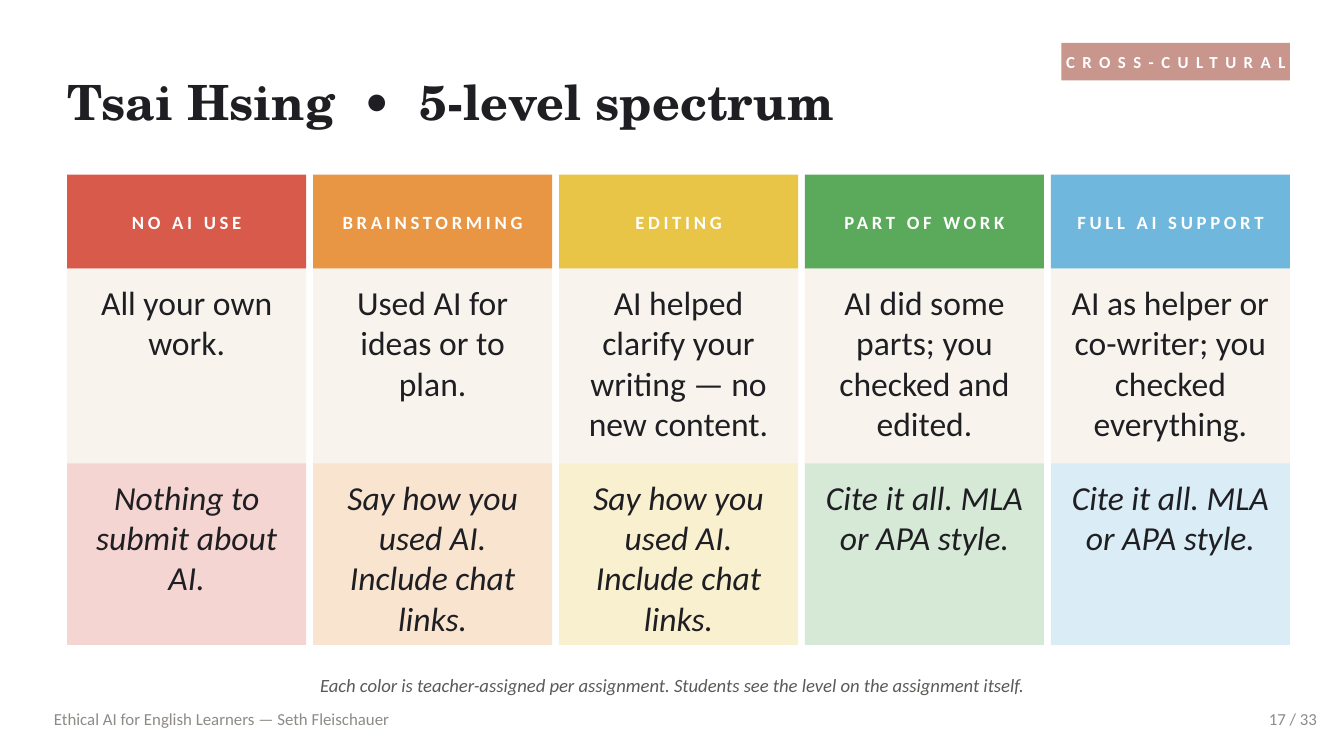
from lxml import etree
from pptx import Presentation
from pptx.dml.color import RGBColor
from pptx.enum.shapes import MSO_SHAPE
from pptx.enum.text import MSO_ANCHOR, PP_ALIGN
from pptx.oxml.ns import qn
from pptx.util import Cm, Pt

RECTANGLE = MSO_SHAPE.RECTANGLE
TOP, MIDDLE = MSO_ANCHOR.TOP, MSO_ANCHOR.MIDDLE
LEFT, CENTER, RIGHT = PP_ALIGN.LEFT, PP_ALIGN.CENTER, PP_ALIGN.RIGHT

INK = RGBColor(0x1F, 0x1F, 0x23)
WHITE = RGBColor(0xFF, 0xFF, 0xFF)
CREAM = RGBColor(0xF8, 0xF4, 0xED)
ROSE = RGBColor(0xC9, 0x96, 0x8D)
NOTE_GRAY = RGBColor(0x5C, 0x5A, 0x57)
FOOTER_GRAY = RGBColor(0x8E, 0x8B, 0x86)
RED = RGBColor(0xD8, 0x5A, 0x4A)
ORANGE = RGBColor(0xE8, 0x95, 0x44)
YELLOW = RGBColor(0xE8, 0xC5, 0x47)
GREEN = RGBColor(0x5B, 0xAA, 0x5C)
BLUE = RGBColor(0x6F, 0xB7, 0xDC)

HEADING_FONT = "TeX Gyre Schola"
BODY_FONT = "Calibri"

LEVELS = [
    ("NO AI USE", RED, "All your own work.", "Nothing to submit about AI."),
    ("BRAINSTORMING", ORANGE, "Used AI for ideas or to plan.",
     "Say how you used AI. Include chat links."),
    ("EDITING", YELLOW, "AI helped clarify your writing — no new content.",
     "Say how you used AI. Include chat links."),
    ("PART OF WORK", GREEN, "AI did some parts; you checked and edited.",
     "Cite it all. MLA or APA style."),
    ("FULL AI SUPPORT", BLUE, "AI as helper or co-writer; you checked everything.",
     "Cite it all. MLA or APA style."),
]


def add_text(slide, box, text, *, size, color, font=BODY_FONT, bold=False,
             italic=False, align=LEFT, anchor=MIDDLE, spacing=0):
    """Place one formatted line of text in a box given in centimetres."""
    frame = slide.shapes.add_textbox(*map(Cm, box)).text_frame
    frame.word_wrap = True
    frame.vertical_anchor = anchor
    frame.margin_left = frame.margin_right = 0
    frame.margin_top = frame.margin_bottom = 0
    paragraph = frame.paragraphs[0]
    paragraph.alignment = align
    run = paragraph.add_run()
    run.text = text
    run.font.name = font
    run.font.size = Pt(size)
    run.font.bold = bold
    run.font.italic = italic
    run.font.color.rgb = color
    if spacing:
        run.font._element.set("spc", str(spacing * 100))


def add_panel(slide, box, color, opacity=100):
    """Draw a borderless rectangle with the given opacity in percent."""
    shape = slide.shapes.add_shape(RECTANGLE, *map(Cm, box))
    shape.shadow.inherit = False
    shape.line.fill.background()
    shape.fill.solid()
    shape.fill.fore_color.rgb = color
    if opacity < 100:
        color_element = shape._element.spPr.find(".//" + qn("a:srgbClr"))
        alpha = etree.SubElement(color_element, qn("a:alpha"))
        alpha.set("val", str(opacity * 1000))


def add_label(slide, box, text, color, *, size, spacing):
    """Draw a coloured panel with a spaced white label."""
    add_panel(slide, box, color)
    add_text(slide, box, text, size=size, color=WHITE, bold=True,
             align=CENTER, spacing=spacing)


def add_cell(slide, box, text, color, *, opacity=100, italic=False):
    """Draw a panel with padded text starting at its top."""
    left, top, width, height = box
    add_panel(slide, box, color, opacity)
    inner = (left + 0.25, top + 0.25, width - 0.5, height - 0.38)
    add_text(slide, inner, text, size=18, color=INK, italic=italic,
             align=CENTER, anchor=TOP)


def add_level(slide, box, level):
    """Stack the label, meaning and citation rule of one level."""
    left, top, width, height = box
    name, color, meaning, rule = level
    label_height, meaning_height = 1.78, 3.68
    meaning_top = top + label_height
    rule_top = meaning_top + meaning_height
    add_label(slide, (left, top, width, label_height), name, color,
              size=10, spacing=2)
    add_cell(slide, (left, meaning_top, width, meaning_height), meaning, CREAM)
    add_cell(slide, (left, rule_top, width, top + height - rule_top), rule,
             color, opacity=25, italic=True)


def add_spectrum(slide, box):
    """Spread the levels across the box in equal columns."""
    left, top, width, height = box
    gap = 0.13
    column_width = (width - gap * (len(LEVELS) - 1)) / len(LEVELS)
    for index, level in enumerate(LEVELS):
        column_left = left + index * (column_width + gap)
        add_level(slide, (column_left, top, column_width, height), level)


def add_header(slide, box):
    """Place the title at the left and the topic badge at the right."""
    left, top, width, height = box
    badge_width = 4.32
    add_text(slide, (left, top + 0.21, 17.02, 1.78),
             "Tsai Hsing  •  5-level spectrum", size=26, color=INK,
             font=HEADING_FONT, bold=True)
    add_label(slide, (left + width - badge_width, top, badge_width, 0.71),
              "CROSS-CULTURAL", ROSE, size=9, spacing=4)


def add_footer(slide, box):
    """Place the page number and the deck name on one line."""
    left, top, width, height = box
    number_width = 2.03
    add_text(slide, (left + width - number_width, top, number_width, height),
             "17 / 33", size=9, color=FOOTER_GRAY, align=RIGHT)
    add_text(slide, (left, top, 17.78, height),
             "Ethical AI for English Learners — Seth Fleischauer",
             size=9, color=FOOTER_GRAY)


def main():
    """Build the slide and save it."""
    presentation = Presentation()
    presentation.slide_width = Cm(25.4)
    presentation.slide_height = Cm(14.29)
    slide = presentation.slides.add_slide(presentation.slide_layouts[6])
    add_header(slide, (1.27, 0.81, 23.11, 1.99))
    add_spectrum(slide, (1.27, 3.3, 23.11, 8.89))
    add_text(slide, (1.27, 12.57, 22.86, 0.76),
             "Each color is teacher-assigned per assignment. "
             "Students see the level on the assignment itself.",
             size=10, color=NOTE_GRAY, italic=True, align=CENTER)
    add_footer(slide, (1.02, 13.21, 23.87, 0.76))
    presentation.save("out.pptx")


if __name__ == "__main__":
    main()
